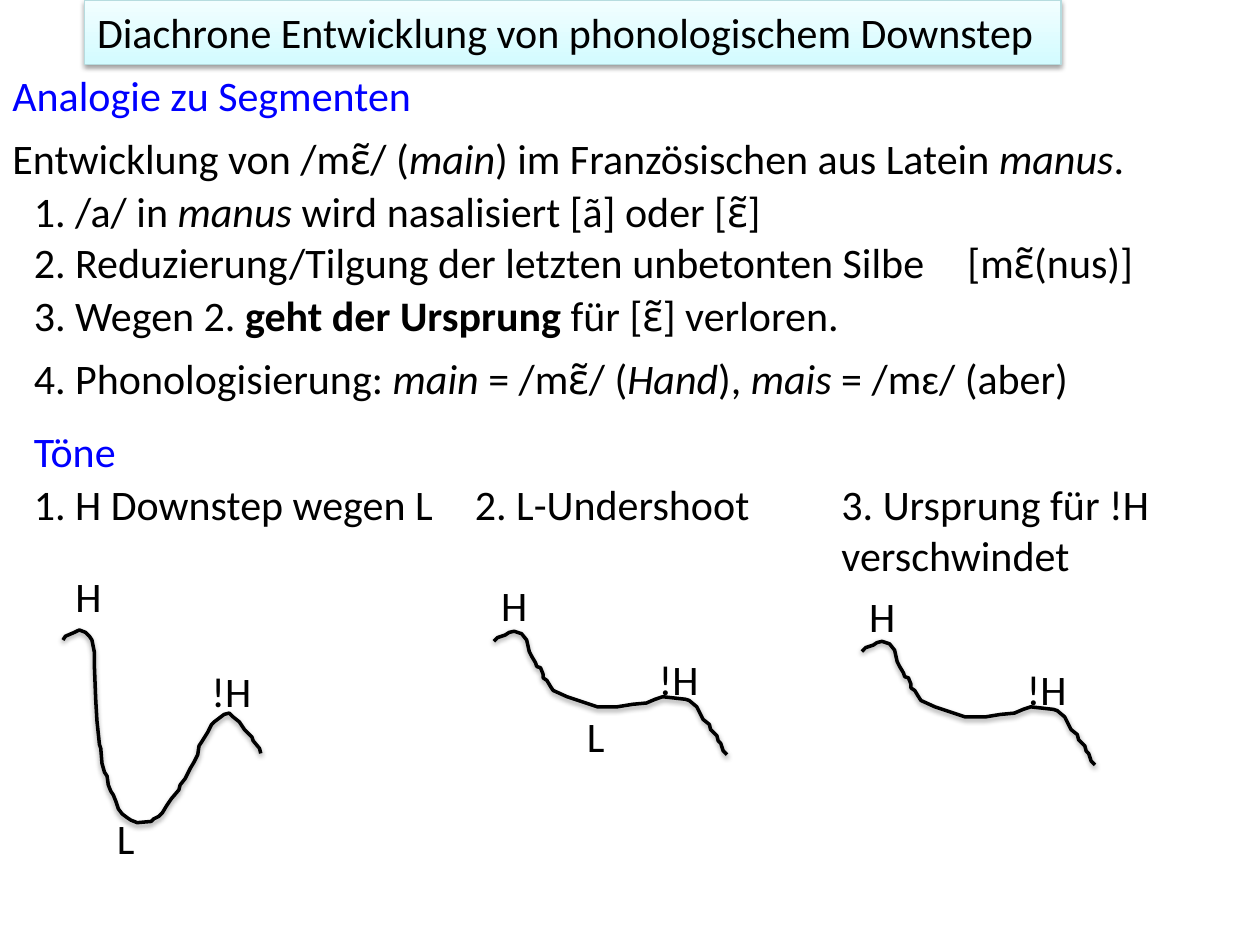
"""Build a slide on the diachronic development of phonological downstep."""
from lxml.etree import SubElement
from pptx import Presentation
from pptx.dml.color import RGBColor
from pptx.enum.text import MSO_ANCHOR, MSO_AUTO_SIZE, PP_ALIGN
from pptx.oxml.ns import qn
from pptx.util import Inches, Pt

BLACK = RGBColor(0x00, 0x00, 0x00)
BLUE = RGBColor(0x00, 0x00, 0xFF)
AQUA = RGBColor(0xD3, 0xFB, 0xFF)
PALE_AQUA = RGBColor(0xF2, 0xFE, 0xFF)
AQUA_LINE = RGBColor(0xB6, 0xDC, 0xDF)


def write(sp, text, color=BLACK, emphasis="italic", auto_size=MSO_AUTO_SIZE.SHAPE_TO_FIT_TEXT):
    """Fill a shape with text whose parts between asterisks are emphasised."""
    tf = sp.text_frame
    tf.word_wrap = True
    tf.auto_size = auto_size
    tf.vertical_anchor = MSO_ANCHOR.TOP
    p = tf.paragraphs[0]
    p.alignment = PP_ALIGN.LEFT
    for i, part in enumerate(text.split("*")):
        r = p.add_run()
        r.text = part
        r.font.name = "Calibri"
        r.font.size = Pt(24)
        r.font.color.rgb = color
        if i % 2:
            setattr(r.font, emphasis, True)


def add_shadow(sp):
    """Give a shape a soft shadow straight below it."""
    sp.shadow.inherit = False
    effects = sp.element.spPr.find(qn("a:effectLst"))
    shadow = SubElement(effects, qn("a:outerShdw"), blurRad=str(Pt(3.1)),
                        dist=str(Pt(1.6)), dir="5400000", rotWithShape="0")
    black = SubElement(shadow, qn("a:srgbClr"), val="000000")
    SubElement(black, qn("a:alpha"), val="38000")


prs = Presentation()
prs.slide_width, prs.slide_height = Inches(10), Inches(7.5)
s = prs.slides.add_slide(prs.slide_layouts[5])

title = s.shapes.title
title.left, title.top = Inches(0.67), Inches(0)
title.width, title.height = Inches(7.75), Inches(0.51)
title.fill.gradient()
title.fill.gradient_angle = 90
for stop, color in zip(title.fill.gradient_stops, (AQUA, PALE_AQUA)):
    stop.color.rgb = color
title.line.color.rgb = AQUA_LINE
title.line.width = Pt(0.75)
add_shadow(title)
write(title, "Diachrone Entwicklung von phonologischem Downstep", auto_size=MSO_AUTO_SIZE.NONE)

texts = [
    (0, 0.5, 4.25, "Analogie zu Segmenten", {"color": BLUE}),
    (0, 1, 9.75, "Entwicklung von /mɛ̃/ (*main*) im Französischen aus Latein *manus*.", {}),
    (0.17, 1.42, 6.42, "1. /a/ in *manus* wird nasalisiert [ã] oder [ɛ̃]", {}),
    (0.17, 1.83, 7.5, "2. Reduzierung/Tilgung der letzten unbetonten Silbe", {}),
    (7.58, 1.83, 1.75, "[mɛ̃(nus)]", {}),
    (0.17, 2.25, 9.83, "3. Wegen 2. *geht der Ursprung *für [ɛ̃] verloren.", {"emphasis": "bold"}),
    (0.17, 2.75, 9.33, "4. Phonologisierung: *main* = /mɛ̃/ (*Hand*), *mais* = /mɛ/ (aber)", {}),
    (0.17, 3.33, 1.25, "Töne", {"color": BLUE}),
    (0.17, 3.75, 3.58, "1. H Downstep wegen L", {}),
    (3.67, 3.75, 2.5, "2. L-Undershoot", {}),
    (6.58, 3.75, 3.42, "3. Ursprung für !H verschwindet", {}),
    (0.5, 4.48, 0.67, "H", {}),
    (1.58, 5.23, 0.67, "!H", {}),
    (0.83, 6.4, 0.83, "L", {}),
    (3.88, 4.55, 0.67, "H", {}),
    (5.13, 5.14, 0.67, "!H", {}),
    (4.56, 5.59, 0.83, "L", {}),
    (6.8, 4.64, 0.67, "H", {}),
    (8.05, 5.22, 0.67, "!H", {}),
]
for x, y, w, text, style in texts:
    h = 0.91 if "verschwindet" in text else 0.51
    write(s.shapes.add_textbox(Inches(x), Inches(y), Inches(w), Inches(h)), text, **style)

deep_fall = [
    (0.5, 5.08), (0.52, 5.05), (0.59, 5.02), (0.63, 5), (0.68, 5.02), (0.71, 5.05),
    (0.73, 5.08), (0.75, 5.18), (0.75, 5.3), (0.76, 5.55), (0.77, 5.72), (0.79, 5.91),
    (0.8, 5.94), (0.81, 6.06), (0.83, 6.13), (0.85, 6.16), (0.86, 6.23), (0.88, 6.28),
    (0.9, 6.31), (0.92, 6.36), (0.94, 6.42), (0.97, 6.46), (1.01, 6.49), (1.04, 6.51),
    (1.09, 6.53), (1.2, 6.52), (1.22, 6.5), (1.26, 6.48), (1.29, 6.45), (1.32, 6.4),
    (1.36, 6.34), (1.42, 6.27), (1.43, 6.23), (1.47, 6.18), (1.51, 6.1), (1.54, 6.05),
    (1.57, 5.99), (1.58, 5.92), (1.6, 5.89), (1.65, 5.81), (1.68, 5.75), (1.7, 5.73),
    (1.78, 5.67), (1.82, 5.66), (1.85, 5.69), (1.9, 5.73), (1.94, 5.79), (2, 5.85),
    (2.01, 5.88), (2.06, 5.94), (2.07, 5.98),
]
shallow_fall = [
    (3.92, 5.09), (3.95, 5.06), (4.01, 5.04), (4.04, 5.02), (4.08, 5.01), (4.14, 5.03),
    (4.18, 5.08), (4.2, 5.17), (4.22, 5.21), (4.25, 5.26), (4.26, 5.29), (4.29, 5.3),
    (4.31, 5.35), (4.31, 5.38), (4.34, 5.4), (4.37, 5.45), (4.39, 5.48), (4.5, 5.53),
    (4.74, 5.61), (4.9, 5.61), (5.02, 5.59), (5.13, 5.58), (5.2, 5.55), (5.26, 5.53),
    (5.44, 5.55), (5.47, 5.56), (5.53, 5.61), (5.55, 5.65), (5.58, 5.71), (5.63, 5.75),
    (5.64, 5.79), (5.67, 5.82), (5.69, 5.84), (5.7, 5.88), (5.72, 5.9), (5.74, 5.96),
    (5.77, 5.99),
]
for points, dx, dy in ((deep_fall, 0, 0), (shallow_fall, 0, 0), (shallow_fall, 2.92, 0.08)):
    contour = [(Inches(x + dx), Inches(y + dy)) for x, y in points]
    builder = s.shapes.build_freeform(*contour[0])
    builder.add_line_segments(contour[1:], close=False)
    sp = builder.convert_to_shape()
    sp.fill.background()
    sp.line.color.rgb = BLACK
    sp.line.width = Pt(2)
    add_shadow(sp)

prs.save("out.pptx")
